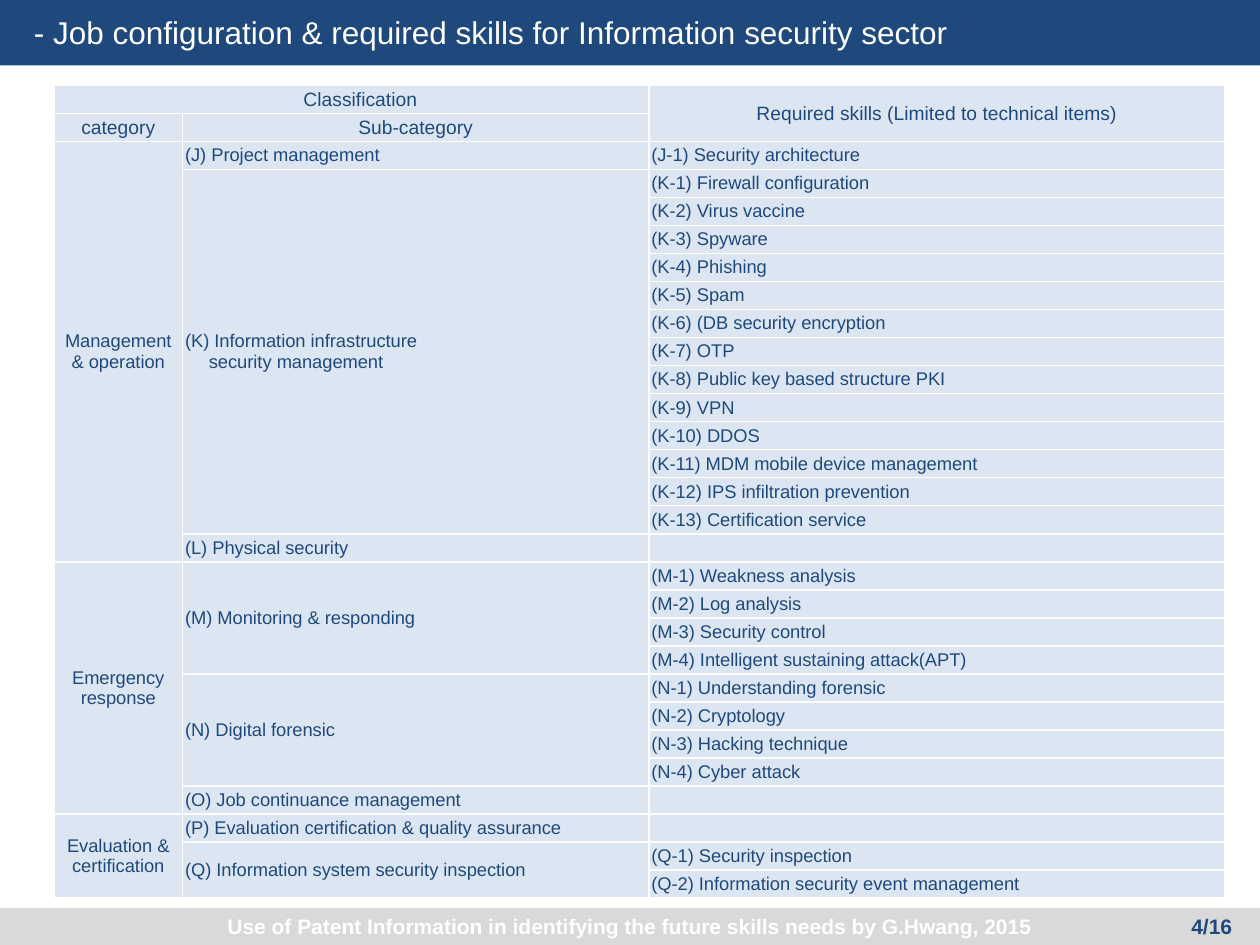
from lxml import etree
from pptx import Presentation
from pptx.dml.color import RGBColor
from pptx.enum.shapes import MSO_SHAPE
from pptx.enum.text import MSO_ANCHOR, MSO_AUTO_SIZE, PP_ALIGN
from pptx.oxml.ns import qn
from pptx.util import Cm, Pt

RECTANGLE = MSO_SHAPE.RECTANGLE
TOP, MIDDLE = MSO_ANCHOR.TOP, MSO_ANCHOR.MIDDLE
LEFT, CENTER, RIGHT = PP_ALIGN.LEFT, PP_ALIGN.CENTER, PP_ALIGN.RIGHT
NO_AUTOFIT = MSO_AUTO_SIZE.NONE

FONT = "Arial"
COLORS = {"navy": "1F497D", "pale": "DCE6F2", "gray": "D9D9D9", "white": "FFFFFF"}

HEADER_SIZE, BODY_SIZE = 11, 10.5
COLUMN_WIDTHS = (2.59, 9.4, 11.61)
SKILL_HANG = 0.25
INFRASTRUCTURE_HANG = 0.48

CATEGORIES = [
    ("Management & operation", [
        ("(J) Project management", ["(J-1) Security architecture"]),
        ("(K) Information infrastructure\vsecurity management", [
            "(K-1) Firewall configuration",
            "(K-2) Virus vaccine",
            "(K-3) Spyware",
            "(K-4) Phishing",
            "(K-5) Spam",
            "(K-6) (DB security encryption",
            "(K-7) OTP",
            "(K-8) Public key based structure PKI",
            "(K-9) VPN",
            "(K-10) DDOS",
            "(K-11) MDM mobile device management",
            "(K-12) IPS infiltration prevention",
            "(K-13) Certification service",
        ]),
        ("(L) Physical security", [""]),
    ]),
    ("Emergency response", [
        ("(M) Monitoring & responding", [
            "(M-1) Weakness analysis",
            "(M-2) Log analysis",
            "(M-3) Security control",
            "(M-4) Intelligent sustaining attack(APT)",
        ]),
        ("(N) Digital forensic", [
            "(N-1) Understanding forensic",
            "(N-2) Cryptology",
            "(N-3) Hacking technique",
            "(N-4) Cyber attack",
        ]),
        ("(O) Job continuance management", [""]),
    ]),
    ("Evaluation & certification", [
        ("(P) Evaluation certification & quality assurance", [""]),
        ("(Q) Information system security inspection", [
            "(Q-1) Security inspection",
            "(Q-2) Information security event management",
        ]),
    ]),
]


def color(name):
    return RGBColor.from_string(COLORS[name])


def write(text_frame, text, size, color_name, alignment=LEFT, bold=False):
    text_frame.text = text
    paragraph = text_frame.paragraphs[0]
    paragraph.alignment = alignment
    for run in paragraph.runs:
        run.font.name = FONT
        run.font.size = Pt(size)
        run.font.bold = bold
        run.font.color.rgb = color(color_name)
    return paragraph


def add_band(slide, left, top, width, height, color_name):
    band = slide.shapes.add_shape(RECTANGLE, Cm(left), Cm(top), Cm(width), Cm(height))
    band.shadow.inherit = False
    band.fill.solid()
    band.fill.fore_color.rgb = color(color_name)
    band.line.fill.background()
    return band


def add_header(slide, left, top, width, height):
    add_band(slide, left, top, width, height, "navy")
    title = slide.shapes.title
    title.left, title.top = Cm(left + 0.43), Cm(top + 0.13)
    title.width, title.height = Cm(width - 0.94), Cm(height - 0.3)
    slide.shapes._spTree.append(title._element)
    text_frame = title.text_frame
    text_frame.auto_size = NO_AUTOFIT
    text_frame.vertical_anchor = TOP
    write(text_frame, "- Job configuration & required skills for Information security sector",
          18, "white")


def add_footer(slide, left, top, width, height):
    band = add_band(slide, left, top, width, height, "gray")
    band.text_frame.vertical_anchor = MIDDLE
    write(band.text_frame,
          "Use of Patent Information in identifying the future skills needs by G.Hwang, 2015",
          12, "white", CENTER, True)


def add_page_number(slide, left, top, width, height):
    box = slide.shapes.add_textbox(Cm(left), Cm(top), Cm(width), Cm(height))
    box.text_frame.word_wrap = True
    write(box.text_frame, "4/16", 12, "navy", RIGHT, True)


def format_cell(cell):
    properties = cell._tc.get_or_add_tcPr()
    for side in ("lnL", "lnR", "lnT", "lnB"):
        border = etree.SubElement(properties, qn(f"a:{side}"), w=str(Pt(1)))
        fill = etree.SubElement(border, qn("a:solidFill"))
        etree.SubElement(fill, qn("a:srgbClr"), val=COLORS["white"])
    cell.fill.solid()
    cell.fill.fore_color.rgb = color("pale")
    cell.vertical_anchor = MIDDLE
    cell.margin_left = cell.margin_right = Cm(0.05)
    cell.margin_top = cell.margin_bottom = Cm(0.05)
    end_properties = cell.text_frame.paragraphs[0]._p.get_or_add_endParaRPr()
    end_properties.set("sz", str(int(BODY_SIZE * 100)))


def fill_cell(table, row, column, text, size=BODY_SIZE, alignment=LEFT,
              rows=1, columns=1, margin=0, indent=0):
    cell = table.cell(row, column)
    if rows > 1 or columns > 1:
        cell.merge(table.cell(row + rows - 1, column + columns - 1))
    if text:
        paragraph = write(cell.text_frame, text, size, "navy", alignment)
        properties = paragraph._p.get_or_add_pPr()
        properties.set("marL", str(Cm(margin)))
        properties.set("indent", str(Cm(indent)))


def add_skills_table(slide, left, top, width, height):
    row_count = 2 + sum(len(skills) for _, groups in CATEGORIES for _, skills in groups)
    table = slide.shapes.add_table(row_count, len(COLUMN_WIDTHS), Cm(left), Cm(top),
                                   Cm(width), Cm(height)).table
    table.first_row = table.horz_banding = False
    for column, column_width in zip(table.columns, COLUMN_WIDTHS):
        column.width = Cm(column_width)
    for row in table.rows:
        row.height = Cm(height / row_count)
    for cell in table.iter_cells():
        format_cell(cell)

    fill_cell(table, 0, 0, "Classification", HEADER_SIZE, CENTER, columns=2, indent=0.36)
    fill_cell(table, 0, 2, "Required skills (Limited to technical items)",
              HEADER_SIZE, CENTER, rows=2)
    fill_cell(table, 1, 0, "category", HEADER_SIZE, CENTER)
    fill_cell(table, 1, 1, "Sub-category", HEADER_SIZE, CENTER)

    row = 2
    for category, groups in CATEGORIES:
        category_rows = sum(len(skills) for _, skills in groups)
        fill_cell(table, row, 0, category, alignment=CENTER, rows=category_rows)
        for group, skills in groups:
            hang = INFRASTRUCTURE_HANG if "\v" in group else 0
            fill_cell(table, row, 1, group, rows=len(skills), margin=hang, indent=-hang)
            for skill in skills:
                fill_cell(table, row, 2, skill, margin=SKILL_HANG, indent=-SKILL_HANG)
                row += 1


def main():
    presentation = Presentation()
    presentation.slide_width, presentation.slide_height = Cm(25.4), Cm(19.05)
    slide = presentation.slides.add_slide(presentation.slide_layouts[5])
    add_footer(slide, 0, 18.31, 25.4, 0.74)
    add_header(slide, 0, 0, 25.4, 1.32)
    add_skills_table(slide, 1.09, 1.72, sum(COLUMN_WIDTHS), 16.4)
    add_page_number(slide, 22.78, 18.29, 2.31, 0.76)
    presentation.save("out.pptx")


if __name__ == "__main__":
    main()
